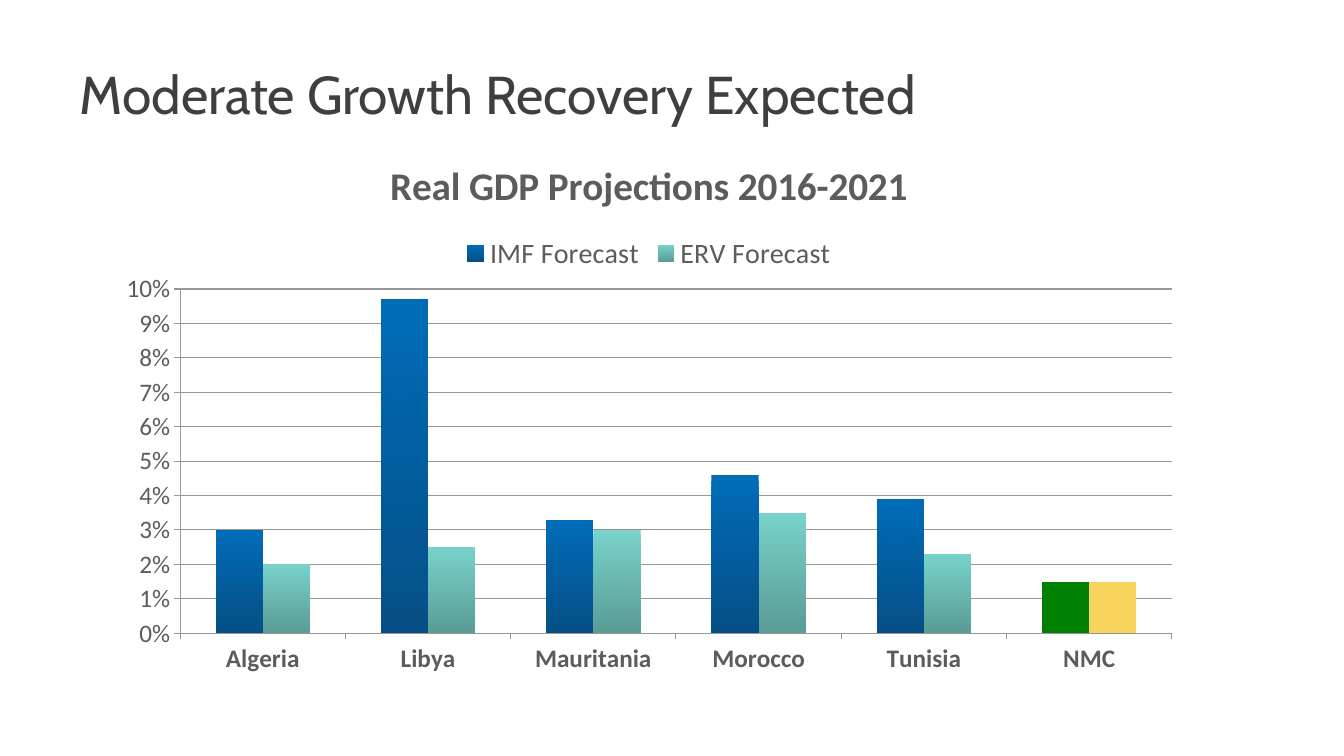
from lxml.etree import SubElement
from pptx import Presentation
from pptx.chart.data import CategoryChartData
from pptx.dml.color import RGBColor
from pptx.enum.chart import XL_CHART_TYPE, XL_LEGEND_POSITION, XL_TICK_MARK
from pptx.enum.text import MSO_ANCHOR
from pptx.oxml.ns import qn
from pptx.util import Inches, Pt

COUNTRIES = ["Algeria", "Libya", "Mauritania", "Morocco", "Tunisia", "NMC"]
# name, values, gradient from top to bottom, colour of the NMC bar
FORECASTS = [
    ("IMF Forecast", [0.03, 0.097, 0.033, 0.046, 0.039, 0.015],
     ("006CB8", "054F85"), "008000"),
    ("ERV Forecast", [0.02, 0.025, 0.03, 0.035, 0.023, 0.015],
     ("78D2CA", "5A9C96"), "F8D35E"),
]
TEXT_GRAY = "5C5C5C"
LINE_GRAY = "979797"


def color(value):
    return RGBColor.from_string(value)


def set_font(font, size, name="Calibri", fill=TEXT_GRAY, bold=False):
    font.name = name
    font.size = Pt(size)
    font.bold = bold
    font.color.rgb = color(fill)


def add_text(page, text, left, top, width, height, **style):
    box = page.shapes.add_textbox(Inches(left), Inches(top), Inches(width), Inches(height))
    frame = box.text_frame
    frame.word_wrap = True
    frame.vertical_anchor = MSO_ANCHOR.MIDDLE
    frame.margin_left = frame.margin_right = Inches(0.12)
    frame.margin_top = frame.margin_bottom = Inches(0.06)
    span = frame.paragraphs[0].add_run()
    span.text = text
    set_font(span.font, **style)


def style_axis(axis, bold=False):
    axis.major_tick_mark = XL_TICK_MARK.OUTSIDE
    axis.minor_tick_mark = XL_TICK_MARK.NONE
    axis.format.line.color.rgb = color(LINE_GRAY)
    set_font(axis.tick_labels.font, 18, bold=bold)


def style_series(series, gradient, highlight):
    fill = series.format.fill
    fill.gradient()
    fill.gradient_angle = 270
    for stop, shade in zip(fill.gradient_stops, gradient):
        stop.color.rgb = color(shade)
    last_bar = series.points[len(COUNTRIES) - 1].format.fill
    last_bar.solid()
    last_bar.fore_color.rgb = color(highlight)


def place_plot(chart, **fractions):
    """Fix the inner plot area as fractions of the chart's size."""
    plot_area = chart.plots[0]._element.getparent()
    layout = SubElement(plot_area, qn("c:layout"))
    plot_area.insert(0, layout)
    manual = SubElement(layout, qn("c:manualLayout"))
    settings = {"layoutTarget": "inner", "xMode": "edge", "yMode": "edge", **fractions}
    for tag, value in settings.items():
        SubElement(manual, qn(f"c:{tag}")).set("val", str(value))


def add_forecast_chart(page):
    data = CategoryChartData(number_format="0%")
    data.categories = COUNTRIES
    for name, values, _, _ in FORECASTS:
        data.add_series(name, values)
    chart = page.shapes.add_chart(
        XL_CHART_TYPE.COLUMN_CLUSTERED,
        Inches(1.03), Inches(1.35), Inches(10.81), Inches(5.42), data).chart
    set_font(chart.font, 10)

    title = chart.chart_title.text_frame
    title.text = "Real GDP Projections 2016-2021"
    set_font(title.paragraphs[0].runs[0].font, 28, bold=True)
    chart.chart_title.include_in_layout = False

    chart.has_legend = True
    chart.legend.position = XL_LEGEND_POSITION.TOP
    chart.legend.include_in_layout = False
    set_font(chart.legend.font, 20)

    style_axis(chart.category_axis, bold=True)
    values_axis = chart.value_axis
    style_axis(values_axis)
    values_axis.minimum_scale = 0
    values_axis.maximum_scale = 0.1
    values_axis.major_unit = 0.01
    values_axis.major_gridlines.format.line.color.rgb = color(LINE_GRAY)
    values_axis.tick_labels.number_format = "0%"
    values_axis.tick_labels.number_format_is_linked = False

    plot = chart.plots[0]
    plot.gap_width = 150
    plot.overlap = 0
    plot.vary_by_categories = False
    for series, (_, _, gradient, highlight) in zip(plot.series, FORECASTS):
        style_series(series, gradient, highlight)
    place_plot(chart, x=0.07, y=0.28, w=0.91, h=0.63)


def main():
    deck = Presentation()
    deck.slide_width = Inches(13.33)
    deck.slide_height = Inches(7.5)
    page = deck.slides.add_slide(deck.slide_layouts[6])
    add_text(page, "Moderate Growth Recovery Expected", 0.67, 0.3, 12, 1.25,
             size=38, name="Cabin", fill="3F3F3F")
    add_forecast_chart(page)
    deck.save("out.pptx")


if __name__ == "__main__":
    main()
